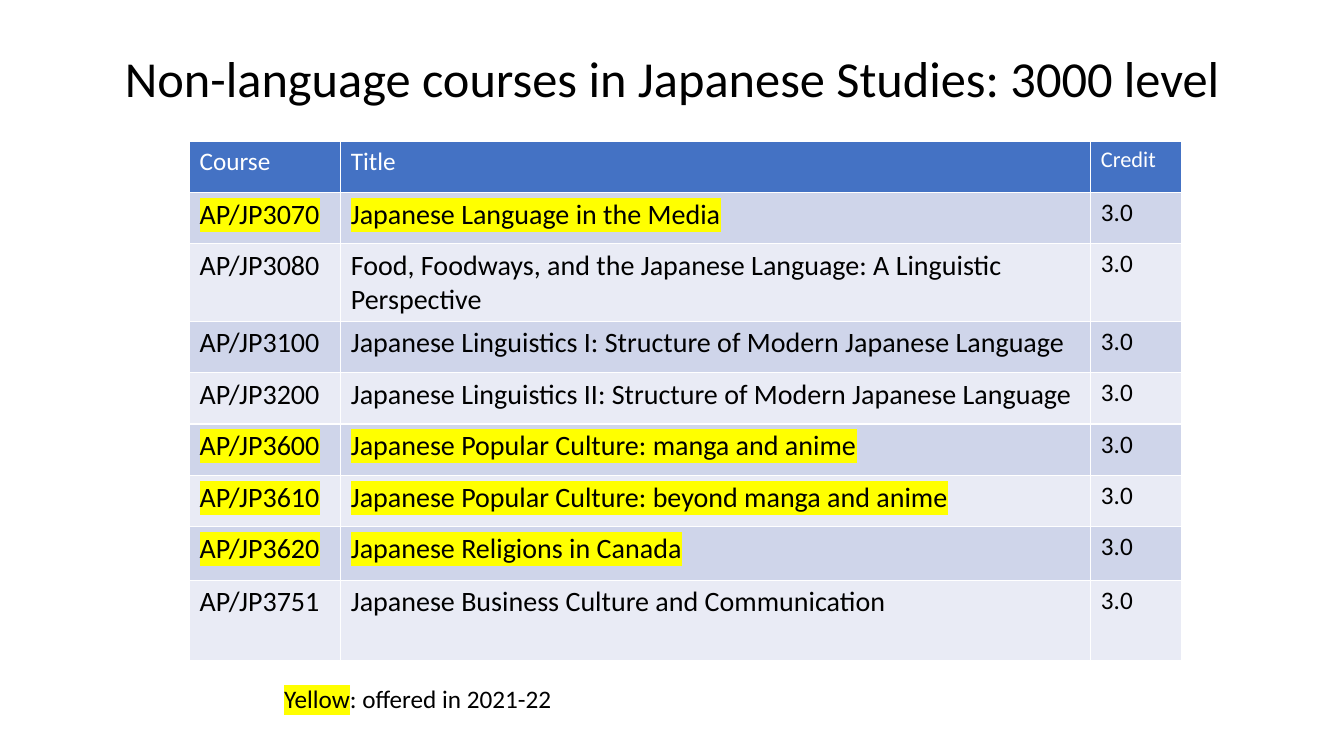
"""Build the slide listing 3000-level Japanese Studies courses."""
from lxml.etree import SubElement
from pptx import Presentation
from pptx.dml.color import RGBColor
from pptx.enum.text import MSO_ANCHOR, PP_ALIGN
from pptx.oxml.ns import qn
from pptx.util import Inches, Pt

COLORS = {"text": "000000", "header_text": "FFFFFF", "header": "4472C4",
          "odd": "CFD5EA", "even": "E9EBF5", "offered": "FFFF00"}
COLUMN_WIDTHS = [1.5, 7.44, 0.9]
ROW_HEIGHTS = [0.51, 0.51, 0.53, 0.51, 0.51, 0.51, 0.51, 0.53, 0.8]
HEADERS = ["Course", "Title", "Credit"]
HEADER_SIZES = [18, 18, 16]
BODY_SIZES = [20, 20, 18]
COURSES = [
    ("AP/JP3070", "Japanese Language in the Media", True),
    ("AP/JP3080", "Food, Foodways, and the Japanese Language: A Linguistic Perspective", False),
    ("AP/JP3100", "Japanese Linguistics I: Structure of Modern Japanese Language", False),
    ("AP/JP3200", "Japanese Linguistics II: Structure of Modern Japanese Language", False),
    ("AP/JP3600", "Japanese Popular Culture: manga and anime", True),
    ("AP/JP3610", "Japanese Popular Culture: beyond manga and anime", True),
    ("AP/JP3620", "Japanese Religions in Canada", True),
    ("AP/JP3751", "Japanese Business Culture and Communication", False),
]


def style_run(run, size, color="text", highlighted=False):
    run.font.name = "Calibri"
    run.font.size = Pt(size)
    run.font.bold = False
    run.font.color.rgb = RGBColor.from_string(COLORS[color])
    if highlighted:
        properties = run.font._element
        highlight = SubElement(properties, qn("a:highlight"))
        SubElement(highlight, qn("a:srgbClr"), val=COLORS["offered"])
        properties.find(qn("a:solidFill")).addnext(highlight)


def add_text(slide, left, top, width, height):
    shape = slide.shapes.add_textbox(Inches(left), Inches(top), Inches(width), Inches(height))
    shape.text_frame.word_wrap = True
    return shape.text_frame


presentation = Presentation()
presentation.slide_width = Inches(13.33)
presentation.slide_height = Inches(7.5)
slide = presentation.slides.add_slide(presentation.slide_layouts[6])

title = add_text(slide, 0.92, 0.08, 11.5, 1.45)
title.vertical_anchor = MSO_ANCHOR.MIDDLE
title.text = "Non-language courses in Japanese Studies: 3000 level"
title.paragraphs[0].alignment = PP_ALIGN.CENTER
title.paragraphs[0].line_spacing = 0.9
style_run(title.paragraphs[0].runs[0], 36)

table = slide.shapes.add_table(
    len(ROW_HEIGHTS), len(COLUMN_WIDTHS), Inches(1.88), Inches(1.4),
    Inches(sum(COLUMN_WIDTHS)), Inches(sum(ROW_HEIGHTS))).table
for column, width in zip(table.columns, COLUMN_WIDTHS):
    column.width = Inches(width)
for row, height in zip(table.rows, ROW_HEIGHTS):
    row.height = Inches(height)

rows = [(HEADERS, False)] + [((code, name, "3.0"), offered) for code, name, offered in COURSES]
for row_index, (texts, offered) in enumerate(rows):
    is_header = row_index == 0
    fill = "header" if is_header else "odd" if row_index % 2 else "even"
    sizes = HEADER_SIZES if is_header else BODY_SIZES
    for column_index, (text, size) in enumerate(zip(texts, sizes)):
        cell = table.cell(row_index, column_index)
        cell.fill.solid()
        cell.fill.fore_color.rgb = RGBColor.from_string(COLORS[fill])
        cell.text_frame.text = text
        style_run(cell.text_frame.paragraphs[0].runs[0], size,
                  "header_text" if is_header else "text", offered and column_index < 2)

legend = add_text(slide, 2.72, 6.73, 3.74, 0.4).paragraphs[0]
for text, highlighted in [("Yellow", True), (": offered in 2021-22", False)]:
    run = legend.add_run()
    run.text = text
    style_run(run, 18, highlighted=highlighted)

presentation.save("out.pptx")
